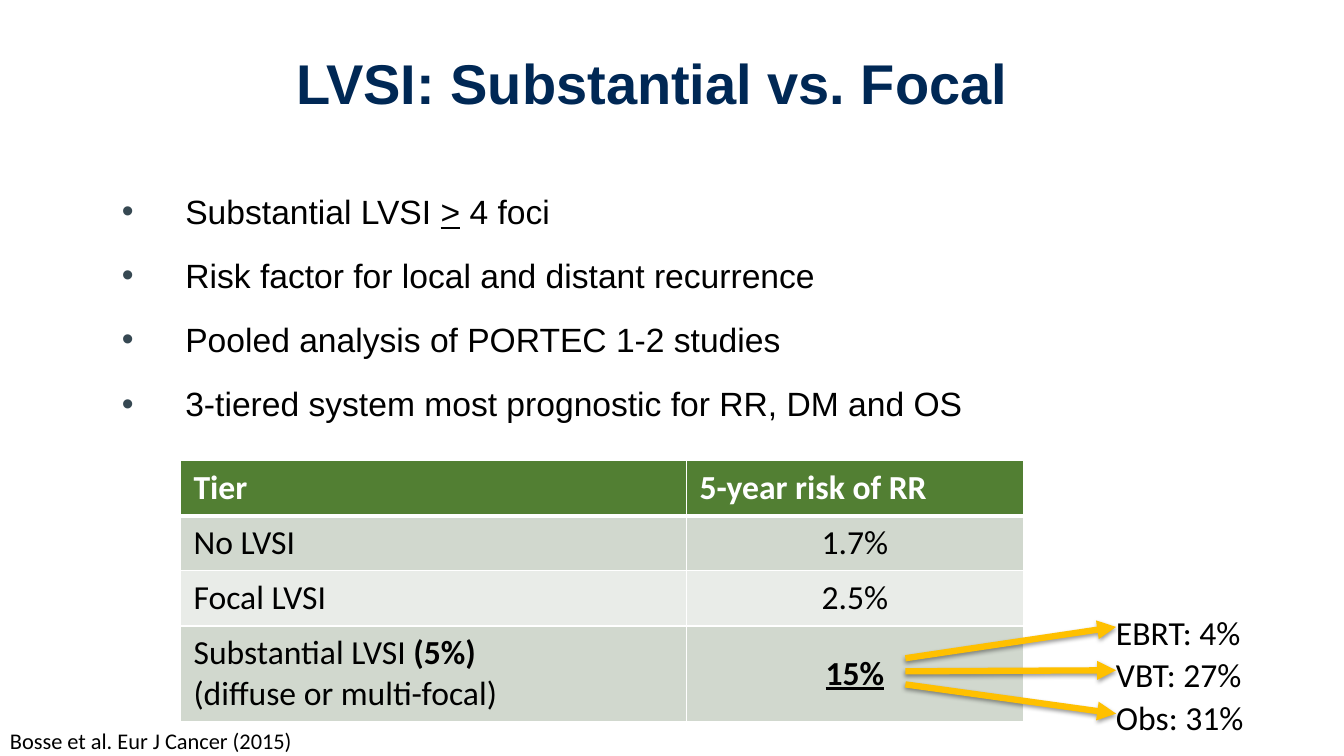
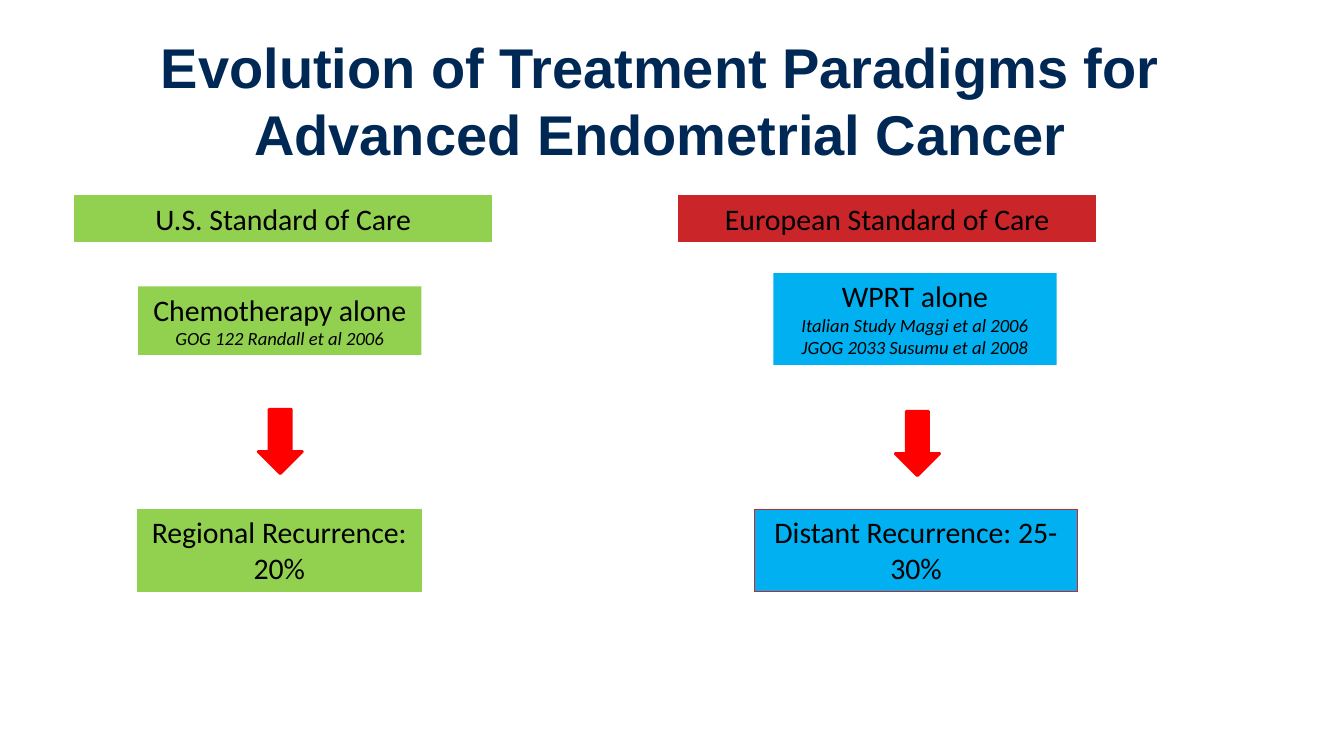
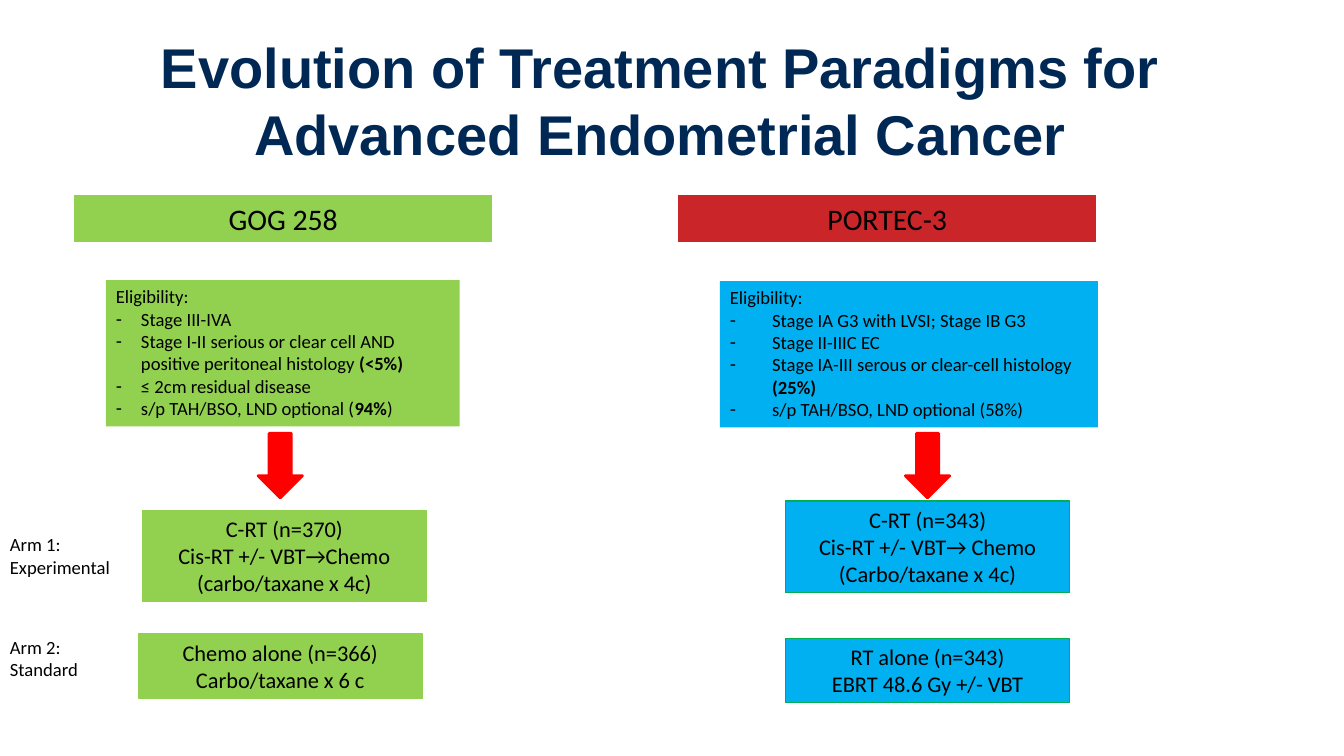
import collections

import lxml.etree
import pptx
import pptx.dml.color
import pptx.enum.shapes
import pptx.enum.text
import pptx.oxml
import pptx.oxml.ns
import pptx.util

Inches = pptx.util.Inches
Pt = pptx.util.Pt
RGBColor = pptx.dml.color.RGBColor
Align = pptx.enum.text.PP_ALIGN
Anchor = pptx.enum.text.MSO_ANCHOR
Shape = pptx.enum.shapes.MSO_SHAPE
qn = pptx.oxml.ns.qn

NAVY = RGBColor(0x00, 0x28, 0x55)
SLATE = RGBColor(0x36, 0x48, 0x52)
BLACK = RGBColor(0x00, 0x00, 0x00)
WHITE = RGBColor(0xFF, 0xFF, 0xFF)
LIME = RGBColor(0x92, 0xD0, 0x50)
SKY = RGBColor(0x00, 0xB0, 0xF0)
CRIMSON = RGBColor(0xCA, 0x26, 0x2A)
EMERALD = RGBColor(0x00, 0xB0, 0x50)
RED = RGBColor(0xFF, 0x00, 0x00)
AMBER = RGBColor(0xFF, 0xC0, 0x00)
HEADER_GREEN = RGBColor(0x52, 0x7F, 0x33)
BAND_DARK = RGBColor(0xD1, 0xD8, 0xCE)
BAND_LIGHT = RGBColor(0xE9, 0xEC, 0xE8)

LARGE, MEDIUM, SMALL = 21.3, 16, 13.3
PARADIGM_TITLE = "Evolution of Treatment Paradigms for Advanced Endometrial Cancer"

Box = collections.namedtuple("Box", "left top width height")
Line = collections.namedtuple("Line", "spans options")
Column = collections.namedtuple("Column", "header banner_fill fill panels arrow")
Panel = collections.namedtuple("Panel", "box lines size outline")

TITLE_BOX = Box(1.05, 0.36, 10.99, 1.25)
COLUMN_BOXES = (Box(0.74, 1.94, 4.14, 5.1), Box(6.73, 1.94, 4.14, 5.1))


def inside(outer, offset):
    return Box(outer.left + offset.left, outer.top + offset.top, offset.width, offset.height)


def place(box):
    return [Inches(length) for length in box]


def line(*spans, **options):
    return Line(spans, options)


def child(parent, tag, **attributes):
    return lxml.etree.SubElement(parent, qn(tag), attributes)


def add_bullet(para, mark, indent, hanging, color):
    properties = para._p.get_or_add_pPr()
    properties.set("marL", str(Inches(indent)))
    properties.set("indent", str(-Inches(hanging)))
    if color is not None:
        child(child(properties, "a:buClr"), "a:srgbClr", val=str(color))
    child(properties, "a:buFont", typeface="Arial")
    child(properties, "a:buChar", char=mark)


def write_text(frame, lines, *, size=LARGE, font="Calibri", color=BLACK, bold=False,
               italic=False, align=Align.LEFT, anchor=Anchor.TOP, bullet=None,
               indent=0, hanging=0, bullet_color=None, spacing=None, before=0):
    frame.word_wrap = True
    frame.auto_size = pptx.enum.text.MSO_AUTO_SIZE.NONE
    frame.vertical_anchor = anchor
    for index, (spans, options) in enumerate(lines):
        para = frame.paragraphs[0] if index == 0 else frame.add_paragraph()
        mark = options.get("bullet", bullet)
        if mark:
            add_bullet(para, mark, options.get("indent", indent),
                       options.get("hanging", hanging), bullet_color)
        para.alignment = align
        if spacing:
            para.line_spacing = spacing
        if index and before:
            para.space_before = Pt(before)
        for content in spans:
            words, style = (content, "") if isinstance(content, str) else content
            span = para.add_run()
            span.text = words
            span.font.name = font
            span.font.size = Pt(options.get("size", size))
            span.font.color.rgb = color
            span.font.bold = bold or "b" in style
            span.font.italic = options.get("italic", italic)
            span.font.underline = "u" in style


def add_page(deck, title, box=TITLE_BOX):
    page = deck.slides.add_slide(deck.slide_layouts[5])
    holder = page.shapes.title
    holder.left, holder.top, holder.width, holder.height = place(box)
    write_text(holder.text_frame, [line(title)], size=40, font="Arial", color=NAVY,
               bold=True, align=Align.CENTER, anchor=Anchor.MIDDLE)
    return page


def add_label(page, box, *lines, **options):
    label = page.shapes.add_textbox(*place(box))
    write_text(label.text_frame, lines, **options)


def add_block(page, kind, box, fill, outline=None, width=0.75):
    block = page.shapes.add_shape(kind, *place(box))
    block.shadow.inherit = False
    block.fill.solid()
    block.fill.fore_color.rgb = fill
    if outline is None:
        block.line.fill.background()
    else:
        block.line.color.rgb = outline
        block.line.width = Pt(width)
    return block


def add_panel(page, box, lines, fill, outline=None, **options):
    block = add_block(page, Shape.RECTANGLE, box, fill, outline)
    write_text(block.text_frame, lines, **options)


def set_borders(cell, bottom_width):
    properties = cell._tc.get_or_add_tcPr()
    for index, side in enumerate(("a:lnL", "a:lnR", "a:lnT", "a:lnB")):
        width = bottom_width if side == "a:lnB" else 1
        edge = pptx.oxml.parse_xml(
            f'<{side} xmlns:a="http://schemas.openxmlformats.org/drawingml/2006/main" '
            f'w="{Pt(width)}"><a:solidFill><a:srgbClr val="{WHITE}"/></a:solidFill></{side}>')
        properties.insert(index, edge)


def add_tier_table(page, box):
    rows = (
        ([line("Tier")], [line("5-year risk of RR")]),
        ([line("No LVSI")], [line("1.7%")]),
        ([line("Focal LVSI")], [line("2.5%")]),
        ([line("Substantial LVSI ", ("(5%)", "b")), line("(diffuse or multi-focal)")],
         [line(("15%", "bu"))]),
    )
    table = page.shapes.add_table(len(rows), 2, *place(box)).table
    table.horz_banding = False
    for column, share in zip(table.columns, (0.6, 0.4)):
        column.width = Inches(round(box.width * share, 2))
    for row, height in zip(table.rows, (0.54, 0.54, 0.54, 0.93)):
        row.height = Inches(height)
    for row_index, contents in enumerate(rows):
        header = row_index == 0
        band = BAND_DARK if row_index % 2 else BAND_LIGHT
        for column_index, lines in enumerate(contents):
            cell = table.cell(row_index, column_index)
            cell.margin_left = cell.margin_right = Inches(0.13)
            cell.margin_top = cell.margin_bottom = Inches(0.07)
            centred = column_index == 1 and not header
            write_text(cell.text_frame, lines, size=24, bold=header,
                       color=WHITE if header else BLACK,
                       align=Align.CENTER if centred else Align.LEFT)
            cell.vertical_anchor = Anchor.MIDDLE if centred else Anchor.TOP
            cell.fill.solid()
            cell.fill.fore_color.rgb = HEADER_GREEN if header else band
            set_borders(cell, 3 if header else 1)


def add_arrow(page, start, end):
    arrow = page.shapes.add_connector(pptx.enum.shapes.MSO_CONNECTOR.STRAIGHT,
                                      *place(start + end))
    arrow.line.color.rgb = AMBER
    arrow.line.width = Pt(4.5)
    child(arrow.line._get_or_add_ln(), "a:tailEnd", type="triangle")
    effects = child(arrow._element.spPr, "a:effectLst")
    shadow = child(effects, "a:outerShdw", blurRad=str(Pt(3.1)), dist=str(Pt(1.6)),
                   dir="5400000", rotWithShape="0")
    child(child(shadow, "a:srgbClr", val=str(BLACK)), "a:alpha", val="38000")


def add_outcomes(page, box):
    for index, outcome in enumerate(("EBRT: 4%", "VBT: 27%", "Obs: 31%")):
        add_arrow(page, (box.left, box.top + 0.51 + 0.13 * index),
                  (box.left + 2.09, box.top + 0.2 + 0.43 * index))
        add_label(page, Box(box.left + 1.99, box.top + 0.42 * index, box.width - 1.99, 0.5),
                  line(outcome), size=24)


def add_column(page, box, column):
    add_panel(page, Box(box.left, box.top, box.width, 0.46), [line(column.header)],
              column.banner_fill, column.banner_fill, align=Align.CENTER)
    for panel in column.panels:
        bulleted = any("bullet" in entry.options for entry in panel.lines)
        add_panel(page, inside(box, panel.box), panel.lines, column.fill, panel.outline,
                  size=panel.size, align=Align.LEFT if bulleted else Align.CENTER)
    left, top = column.arrow
    add_block(page, Shape.DOWN_ARROW, inside(box, Box(left, top, 0.44, 0.64)), RED, RED, 2)


def add_column_page(deck, columns):
    page = add_page(deck, PARADIGM_TITLE)
    for box, column in zip(COLUMN_BOXES, columns):
        add_column(page, box, column)
    return page


def study(text):
    return line(text, size=SMALL, italic=True)


def eligibility(indent, *items):
    return [line("Eligibility:")] + [
        line(*item, bullet="-", indent=indent, hanging=indent) for item in items]


def build_lvsi(deck):
    page = add_page(deck, "LVSI: Substantial vs. Focal", Box(0.97, 0.19, 10.99, 1.25))
    add_label(page, Box(1.07, 1.72, 11.16, 2.71),
              line("Substantial LVSI ", (">", "u"), " 4 foci"),
              line("Risk factor for local and distant recurrence"),
              line("Pooled analysis of PORTEC 1-2 studies"),
              line("3-tiered system most prognostic for RR, DM and OS"),
              size=24, font="Arial", bullet="•", indent=0.67, hanging=0.63,
              bullet_color=SLATE, spacing=1.3, before=8.5)
    add_tier_table(page, Box(1.79, 4.57, 8.36, 2.55))
    add_outcomes(page, Box(8.98, 6.02, 4.3, 1.34))
    add_label(page, Box(0, 7.16, 5.44, 0.34), line("Bosse et al. Eur J Cancer (2015)"),
              size=MEDIUM)


def build_standards(deck):
    american = Column("U.S. Standard of Care", LIME, LIME, (
        Panel(Box(0.63, 0.9, 2.81, 0.68),
              [line("Chemotherapy alone"), study("GOG 122 Randall et al 2006")], LARGE, None),
        Panel(Box(0.62, 3.11, 2.82, 0.82), [line("Regional Recurrence: 20%")], LARGE, LIME),
    ), (1.82, 2.12))
    european = Column("European Standard of Care", CRIMSON, SKY, (
        Panel(Box(0.94, 0.77, 2.81, 0.91),
              [line("WPRT alone"), study("Italian Study Maggi et al 2006"),
               study("JGOG 2033 Susumu et al 2008")], LARGE, None),
        Panel(Box(0.75, 3.11, 3.21, 0.82), [line("Distant Recurrence: 25-30%")],
              LARGE, CRIMSON),
    ), (2.15, 2.14))
    add_column_page(deck, (american, european))


def build_trials(deck):
    gog = Column("GOG 258", LIME, LIME, (
        Panel(Box(0.31, 0.84, 3.51, 1.45), eligibility(
            0.25,
            ("Stage III-IVA",),
            ("Stage I-II serious or clear cell AND positive peritoneal histology ",
             ("(<5%)", "b")),
            ("≤ 2cm residual disease",),
            ("s/p TAH/BSO, LND optional (", ("94%", "b"), ")")), SMALL, None),
        Panel(Box(0.67, 3.12, 2.82, 0.91),
              [line("C-RT (n=370)"), line("Cis-RT +/- VBT→Chemo (carbo/taxane x 4c)")],
              MEDIUM, LIME),
        Panel(Box(0.63, 4.35, 2.82, 0.64),
              [line("Chemo alone (n=366)"), line("Carbo/taxane x 6 c")], MEDIUM, LIME),
    ), (1.82, 2.36))
    portec = Column("PORTEC-3", CRIMSON, SKY, (
        Panel(Box(0.41, 0.85, 3.75, 1.45), eligibility(
            0.42,
            ("Stage IA G3 with LVSI; Stage IB G3",),
            ("Stage II-IIIC EC",),
            ("Stage IA-III serous or clear-cell histology ", ("(25%)", "b")),
            ("s/p TAH/BSO, LND optional (58%)",)), SMALL, None),
        Panel(Box(1.06, 3.03, 2.82, 0.91),
              [line("C-RT (n=343)"), line("Cis-RT +/- VBT→ Chemo (Carbo/taxane x 4c)")],
              MEDIUM, EMERALD),
        Panel(Box(1.06, 4.39, 2.82, 0.64),
              [line("RT alone (n=343)"), line("EBRT 48.6 Gy +/- VBT")], MEDIUM, EMERALD),
    ), (2.25, 2.36))
    page = add_column_page(deck, (gog, portec))
    for top, arm in ((5.24, "Arm 1: Experimental"), (6.26, "Arm 2: Standard")):
        add_label(page, Box(0, top, 1.3, 0.55), line(arm), size=SMALL)


def main():
    deck = pptx.Presentation()
    deck.slide_width, deck.slide_height = Inches(13.33), Inches(7.5)
    build_lvsi(deck)
    build_standards(deck)
    build_trials(deck)
    deck.save("out.pptx")


if __name__ == "__main__":
    main()
